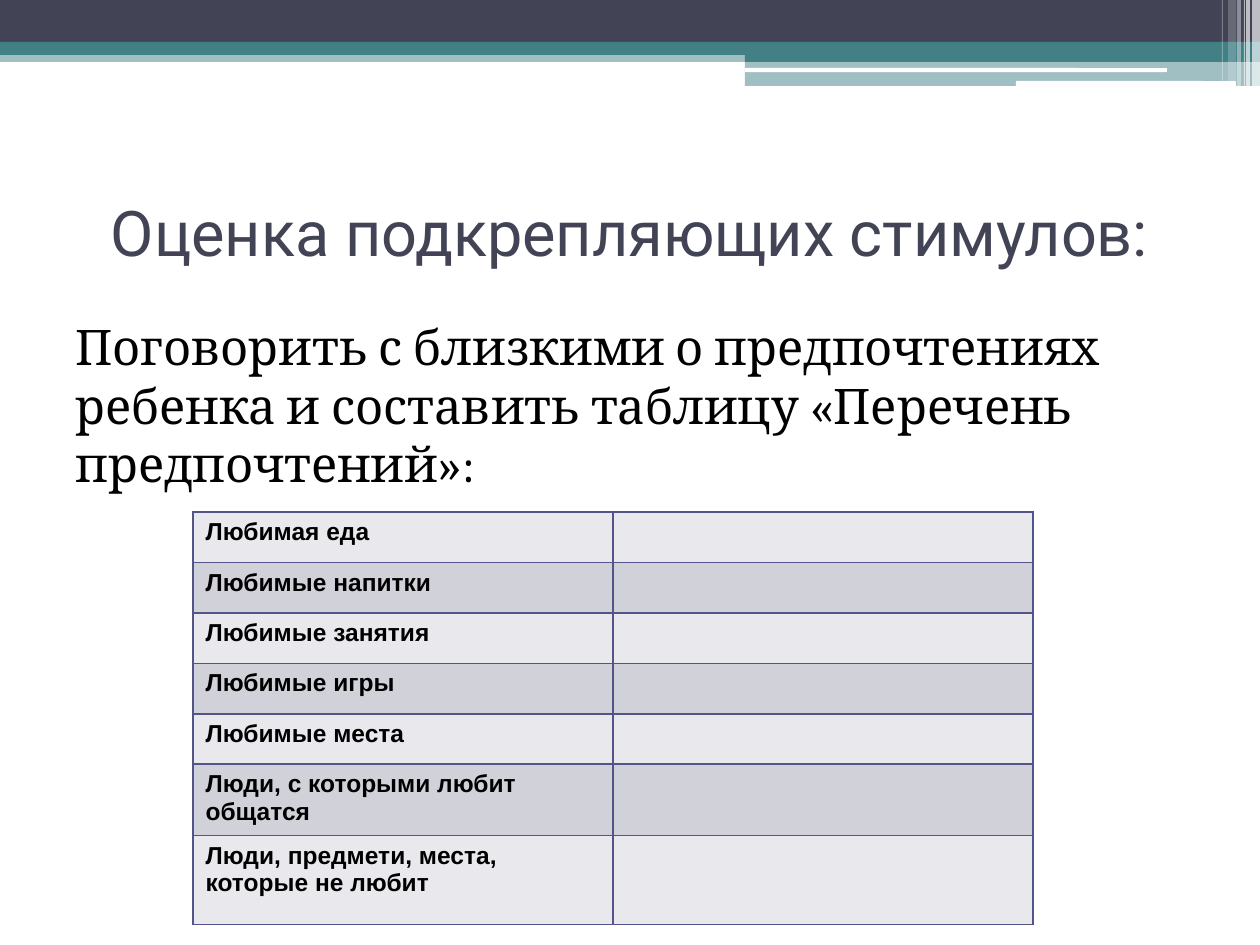
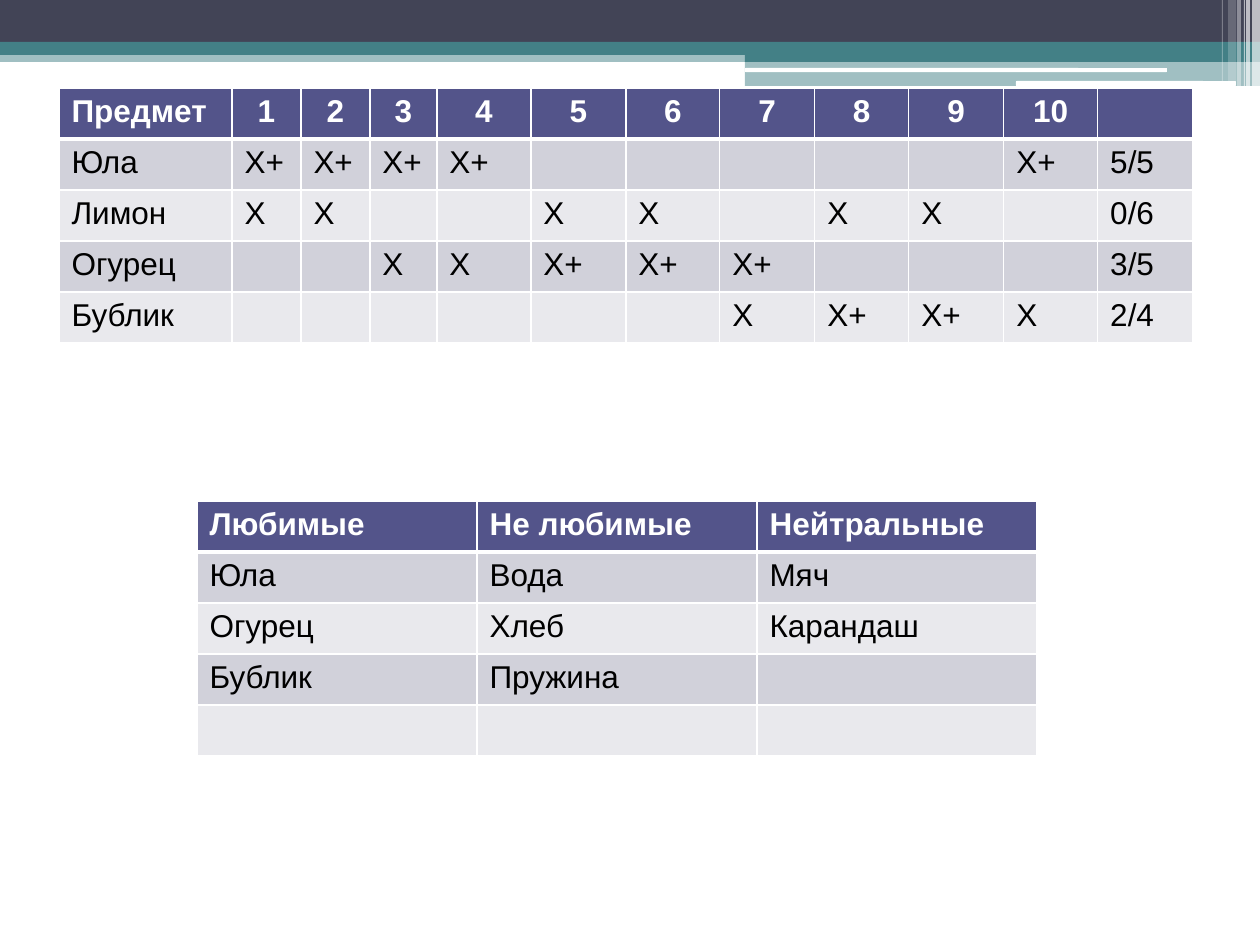
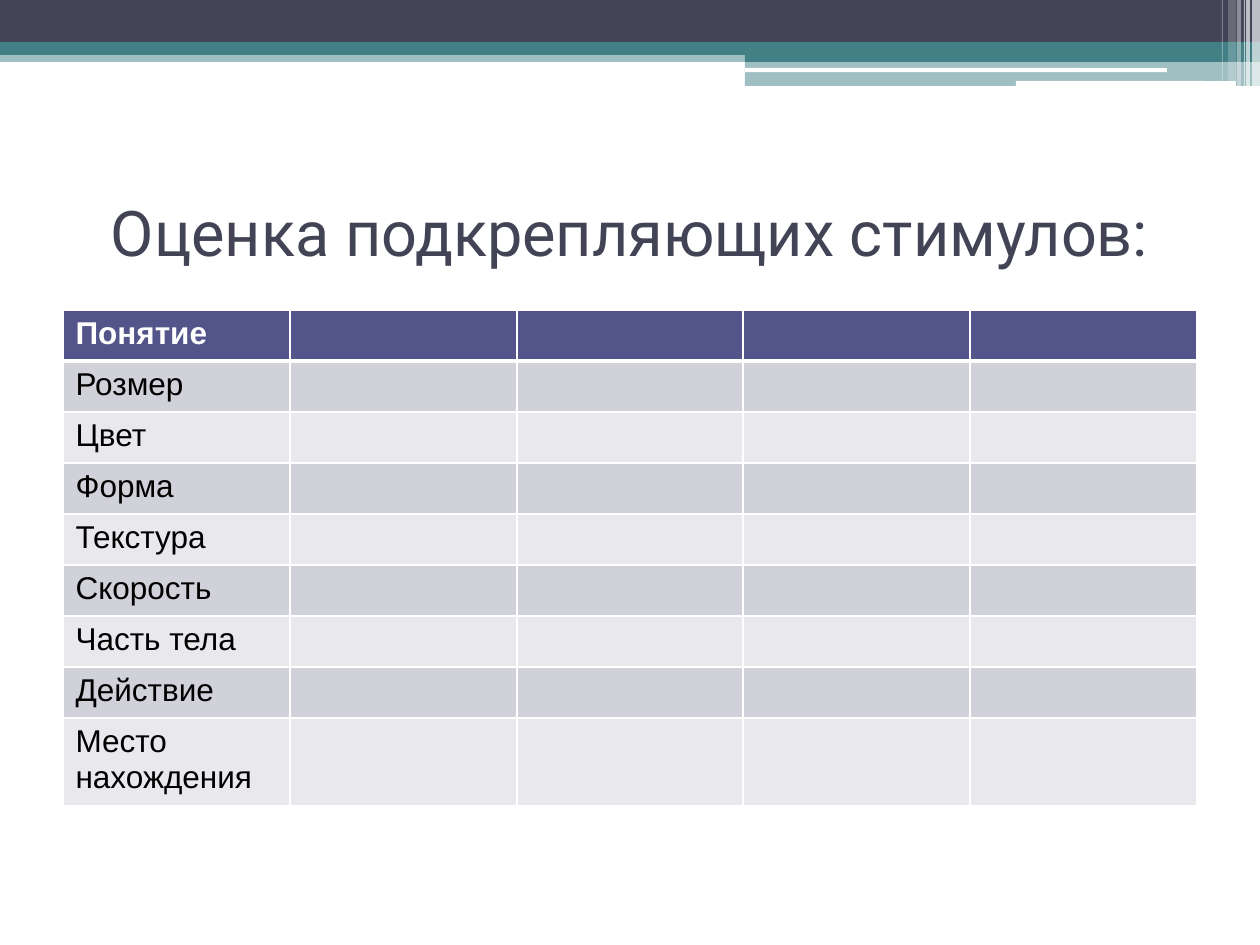
"""Build three slides on assessing a child's reinforcing stimuli."""
from dataclasses import dataclass

from lxml.etree import SubElement
from pptx import Presentation
from pptx.dml.color import RGBColor as RGB
from pptx.enum.shapes import MSO_SHAPE as Shape
from pptx.enum.text import MSO_ANCHOR as Anchor, PP_ALIGN as Align
from pptx.oxml import parse_xml
from pptx.oxml.ns import nsdecls, qn
from pptx.slide import Slide
from pptx.table import _Cell as Cell
from pptx.util import Emu, Pt

PX_PER_INCH = 126


@dataclass(frozen=True)
class Theme:
    ink: str = "424456"
    teal: str = "438086"
    indigo: str = "53548A"
    white: str = "FFFFFF"
    black: str = "000000"
    pale: str = "E9E9ED"
    grey: str = "D1D1DA"
    title_font: str = "Roboto"
    body_font: str = "Cambria"
    table_font: str = "Arial"
    title_size: int = 36
    body_size: int = 28
    table_size: int = 18
    list_size: int = 14


T = Theme()


@dataclass(frozen=True)
class Band:
    x: int
    y: int
    w: int
    h: int
    color: str = T.white
    alpha: int = 100
    kind: Shape = Shape.RECTANGLE


@dataclass(frozen=True)
class TextSpec:
    x: int
    y: int
    w: int
    h: int
    font: str
    size: int
    color: str
    align: Align = Align.LEFT
    anchor: Anchor = Anchor.TOP
    before: int = 0


@dataclass(frozen=True)
class TableSpec:
    x: int
    y: int
    cols: tuple[int, ...]
    heights: tuple[int, ...]
    rows: tuple[str, ...]
    header: bool = True
    centred_header: bool = False
    size: int = T.table_size
    border: str = T.white


BANDS = (
    Band(0, 50, 1260, 12, T.teal, 50),
    Band(0, 0, 1260, 42, T.ink),
    Band(0, 42, 1260, 13, T.teal),
    Band(745, 49, 515, 13, T.teal),
    Band(745, 61, 515, 25, T.teal, 50),
    Band(745, 68, 422, 4, kind=Shape.ROUNDED_RECTANGLE),
    Band(1016, 81, 220, 5, kind=Shape.ROUNDED_RECTANGLE),
    Band(1252, 0, 8, 86, alpha=65),
    Band(1246, 0, 4, 86, alpha=65),
    Band(1244, 0, 1, 86, alpha=60),
    Band(1237, 0, 4, 86, alpha=40),
    Band(1228, 0, 8, 81, alpha=20),
    Band(1222, 0, 1, 81, alpha=30),
)

TITLE = TextSpec(63, 157, 1134, 148, T.title_font, T.title_size, T.ink,
                 Align.CENTER, Anchor.MIDDLE)
BODY = TextSpec(63, 310, 1134, 596, T.body_font, T.body_size, T.black, before=3)
TITLE_TEXT = "Оценка подкрепляющих стимулов:"
BODY_TEXT = ("Поговорить с близкими о предпочтениях ребенка и составить "
             "таблицу «Перечень предпочтений»:")

PREFERENCES = TableSpec(
    193, 512, (420,) * 2, (47,) * 5 + (66, 89),
    (
        "Любимая еда|",
        "Любимые напитки|",
        "Любимые занятия|",
        "Любимые игры|",
        "Любимые места|",
        "Люди, с которыми любит общатся|",
        "Люди, предмети, места, которые не любит|",
    ),
    header=False, size=T.list_size, border=T.indigo,
)
TRIALS = TableSpec(
    59, 88, (173, 69, 69, 67) + (94, 95) * 4, (51,) * 4 + (42,),
    (
        "Предмет|1|2|3|4|5|6|7|8|9|10|",
        "Юла|Х+|Х+|Х+|Х+||||||Х+|5/5",
        "Лимон|Х|Х|||Х|Х||Х|Х||0/6",
        "Огурец|||Х|Х|Х+|Х+|Х+||||3/5",
        "Бублик|||||||Х|Х+|Х+|Х|2/4",
    ),
    centred_header=True,
)
GROUPS = TableSpec(
    197, 501, (280,) * 3, (51,) * 5,
    (
        "Любимые|Не любимые|Нейтральные",
        "Юла|Вода|Мяч",
        "Огурец|Хлеб|Карандаш",
        "Бублик|Пружина|",
        "||",
    ),
)
CONCEPTS = TableSpec(
    63, 310, (227, 227, 226, 227, 227), (51,) * 9,
    tuple(f"{name}||||" for name in (
        "Понятие", "Розмер", "Цвет", "Форма", "Текстура", "Скорость",
        "Часть тела", "Действие", "Место нахождения")),
)


def px(n: int) -> Emu:
    """Turn pixels into EMU."""
    return Emu(round(n * 914400 / PX_PER_INCH))


def style_font(p, name: str, size: int, color: str, bold: bool = False) -> None:
    """Set the font of a whole paragraph."""
    f = p.font
    f.name, f.size, f.bold = name, Pt(size), bold
    f.color.rgb = RGB.from_string(color)


def add_band(s: Slide, band: Band) -> None:
    """Draw one flat piece of the top decoration."""
    sp = s.shapes.add_shape(band.kind, *map(px, (band.x, band.y, band.w, band.h)))
    sp.shadow.inherit = False
    sp.line.fill.background()
    sp.fill.solid()
    sp.fill.fore_color.rgb = RGB.from_string(band.color)
    if band.alpha < 100:
        clr = sp._element.spPr.find(f"{qn('a:solidFill')}/{qn('a:srgbClr')}")
        SubElement(clr, qn("a:alpha"), val=str(band.alpha * 1000))


def add_text(s: Slide, spec: TextSpec, text: str) -> None:
    """Draw a wrapped text box with one paragraph."""
    tf = s.shapes.add_textbox(*map(px, (spec.x, spec.y, spec.w, spec.h))).text_frame
    tf.word_wrap = True
    tf.vertical_anchor = spec.anchor
    p = tf.paragraphs[0]
    p.text, p.alignment, p.space_before = text, spec.align, Pt(spec.before)
    style_font(p, spec.font, spec.size, spec.color)


def set_borders(cell: Cell, color: str, top: int, bottom: int) -> None:
    """Outline a cell, with widths in points above and below."""
    tcPr = cell._tc.get_or_add_tcPr()
    for i, (side, width) in enumerate(zip("LRTB", (1, 1, top, bottom))):
        tcPr.insert(i, parse_xml(
            f'<a:ln{side} {nsdecls("a")} w="{Pt(width)}"><a:solidFill>'
            f'<a:srgbClr val="{color}"/></a:solidFill></a:ln{side}>'))


def add_table(s: Slide, spec: TableSpec) -> None:
    """Draw a table with banded rows and an optional header."""
    frame = s.shapes.add_table(
        len(spec.rows), len(spec.cols), px(spec.x), px(spec.y),
        px(sum(spec.cols)), px(sum(spec.heights)))
    table = frame.table
    table.first_row = spec.header
    for col, width in zip(table.columns, spec.cols):
        col.width = px(width)
    for r, (height, line) in enumerate(zip(spec.heights, spec.rows)):
        table.rows[r].height = px(height)
        head = spec.header and r == 0
        fill = T.indigo if head else T.grey if r % 2 else T.pale
        for c, text in enumerate(line.split("|")):
            cell = table.cell(r, c)
            cell.fill.solid()
            cell.fill.fore_color.rgb = RGB.from_string(fill)
            set_borders(cell, spec.border, 3 if spec.header and r == 1 else 1,
                        3 if head else 1)
            if text:
                p = cell.text_frame.paragraphs[0]
                p.text = text
                style_font(p, T.table_font, spec.size,
                           T.white if head else T.black, head or not spec.header)
                if head and spec.centred_header and c:
                    p.alignment = Align.CENTER


def add_slide(prs, texts: tuple[tuple[TextSpec, str], ...],
              tables: tuple[TableSpec, ...]) -> None:
    """Add a decorated slide with its texts and tables."""
    s = prs.slides.add_slide(prs.slide_layouts[6])
    for band in BANDS:
        add_band(s, band)
    for spec, text in texts:
        add_text(s, spec, text)
    for spec in tables:
        add_table(s, spec)


def main() -> None:
    """Build and save the presentation."""
    prs = Presentation()
    prs.slide_width, prs.slide_height = px(1260), px(945)
    title = (TITLE, TITLE_TEXT)
    add_slide(prs, (title, (BODY, BODY_TEXT)), (PREFERENCES,))
    add_slide(prs, (), (TRIALS, GROUPS))
    add_slide(prs, (title,), (CONCEPTS,))
    prs.save("out.pptx")


if __name__ == "__main__":
    main()
